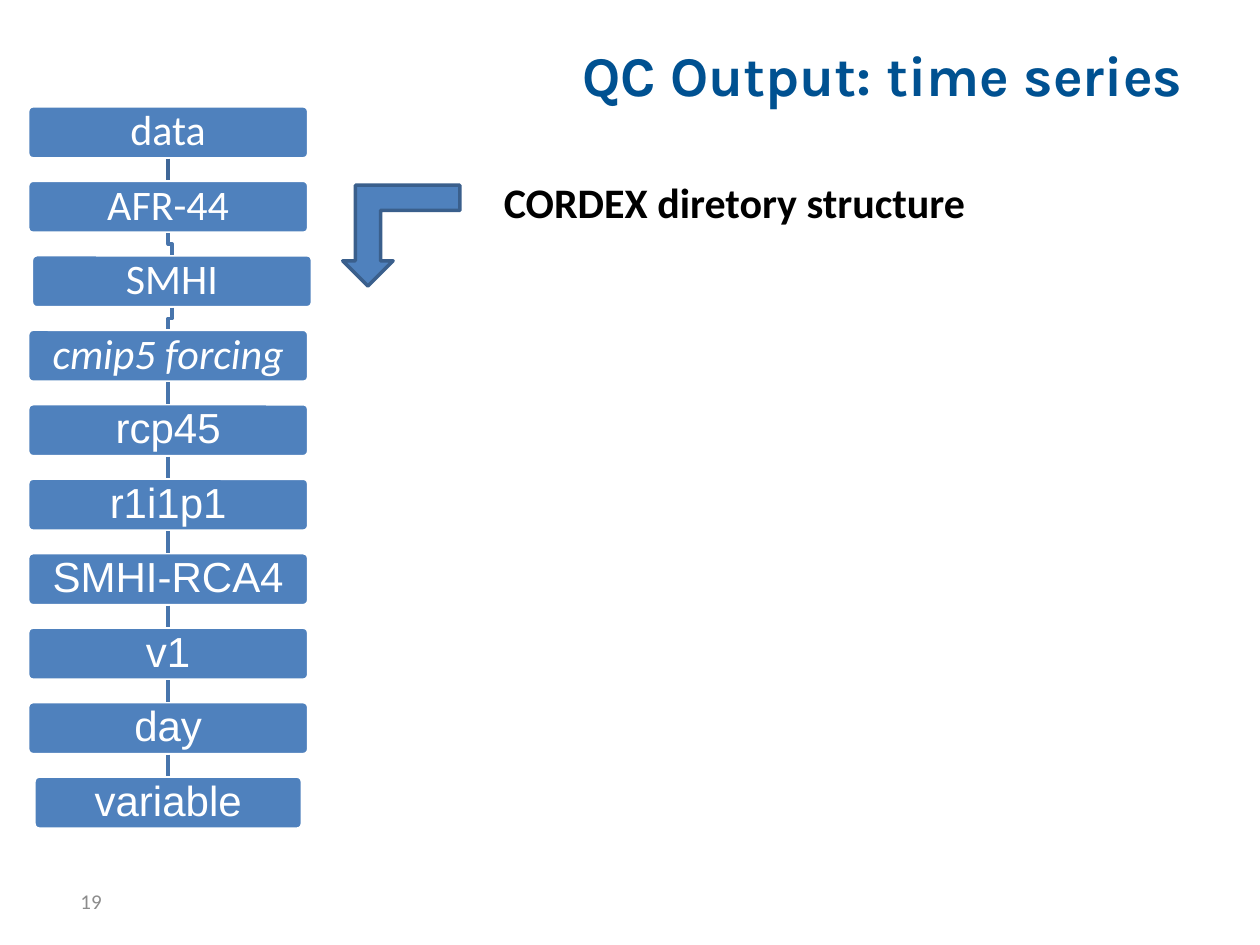
from pptx import Presentation
from pptx.dml.color import RGBColor
from pptx.enum.shapes import MSO_CONNECTOR as Link, MSO_SHAPE as Form
from pptx.enum.text import MSO_ANCHOR as Anchor, MSO_AUTO_SIZE as Fit, PP_ALIGN as Align
from pptx.oxml.ns import qn
from pptx.util import Inches, Pt
from lxml.etree import SubElement

BLUE, WHITE = "4F81BD", "FFFFFF"
MID, TOP, WIDE, HIGH = 1.335, 0.84, 2.23, 0.42
STEP = 5.32 / 9

# name, font, italic, shift to the right, width
LEVELS = [
    ("data", "Calibri", False, 0, WIDE),
    ("AFR-44", "Calibri", False, 0, WIDE),
    ("SMHI", "Calibri", False, 0.03, WIDE),
    ("cmip5 forcing", "Calibri", True, 0, WIDE),
    ("rcp45", "Arial", False, 0, WIDE),
    ("r1i1p1", "Arial", False, 0, WIDE),
    ("SMHI-RCA4", "Arial", False, 0, WIDE),
    ("v1", "Arial", False, 0, WIDE),
    ("day", "Arial", False, 0, WIDE),
    ("variable", "Arial", False, 0, 2.13),
]


def color(code):
    return RGBColor.from_string(code)


def write(shape, text, font, size, code, align=Align.LEFT, anchor=Anchor.MIDDLE,
          bold=False, italic=False, space=1.0):
    frame = shape.text_frame
    frame.text = text
    frame.word_wrap = True
    frame.auto_size = Fit.NONE
    frame.vertical_anchor = anchor
    line = frame.paragraphs[0]
    line.alignment = align
    line.line_spacing = space
    face = line.runs[0].font
    face.name, face.size = font, Pt(size)
    face.bold, face.italic = bold, italic
    face.color.rgb = color(code)


def stroke(shape, code):
    shape.line.color.rgb = color(code)
    shape.line.width = Pt(2)


def add_form(slide, form, left, top, width, height, edge):
    shape = slide.shapes.add_shape(
        form, Inches(left), Inches(top), Inches(width), Inches(height))
    shape.shadow.inherit = False
    shape.fill.solid()
    shape.fill.fore_color.rgb = color(BLUE)
    stroke(shape, edge)
    return shape


def add_level(slide, row, name, font, italic, shift, width):
    box = add_form(slide, Form.ROUNDED_RECTANGLE, MID + shift - width / 2,
                   TOP + row * STEP, width, HIGH, WHITE)
    box.adjustments[0] = 0.1
    write(box, name, font, 24, WHITE, Align.CENTER, italic=italic, space=0.9)
    return box


def add_link(slide, upper, lower, code):
    line = slide.shapes.add_connector(Link.STRAIGHT, 0, 0, 0, 0)
    line.begin_connect(upper, 2)
    line.end_connect(lower, 0)
    SubElement(line._element.spPr, qn("a:effectLst"))
    stroke(line, code)


def add_elbow(slide, upper, lower, code):
    """Draw a stepped line between boxes whose centres differ."""
    start, end = (box.left + box.width // 2 for box in (upper, lower))
    top, low = upper.top + upper.height, lower.top
    half = (top + low) // 2
    path = slide.shapes.build_freeform(start, top)
    path.add_line_segments([(start, half), (end, half), (end, low)], close=False)
    line = path.convert_to_shape()
    line.shadow.inherit = False
    line.fill.background()
    stroke(line, code)


def add_tree(slide):
    prior, offset = None, 0
    for row, level in enumerate(LEVELS):
        shift = level[3]
        box = add_level(slide, row, *level)
        if prior is not None:
            join = add_link if shift == offset else add_elbow
            join(slide, prior, box, "3F6797" if row == 1 else "4875AC")
        prior, offset = box, shift


def add_text(slide, left, top, width, height, *args, **style):
    box = slide.shapes.add_textbox(
        Inches(left), Inches(top), Inches(width), Inches(height))
    write(box, *args, **style)


def add_title(slide, text):
    title = slide.shapes.title
    title.left, title.top = Inches(0.49), Inches(0.36)
    title.width, title.height = Inches(9), Inches(0.46)
    write(title, text, "Karla", 32, "005191", Align.RIGHT, bold=True)


def main():
    deck = Presentation()
    deck.slide_width, deck.slide_height = Inches(10), Inches(7.5)
    slide = deck.slides.add_slide(deck.slide_layouts[5])
    add_title(slide, "QC Output: time series")
    add_text(slide, 0.54, 6.95, 2.33, 0.4, "19", "Calibri", 12, "8C8C8C")
    add_tree(slide)
    add_text(slide, 3.9, 1.15, 4.72, 0.64, "CORDEX diretory structure",
             "Calibri", 24, "000000", anchor=Anchor.TOP, bold=True, space=1.5)
    arrow = add_form(slide, Form.BENT_UP_ARROW, 2.72, 1.47, 0.93, 0.8, "3A5F8C")
    arrow.rotation = 180
    deck.save("out.pptx")


if __name__ == "__main__":
    main()
